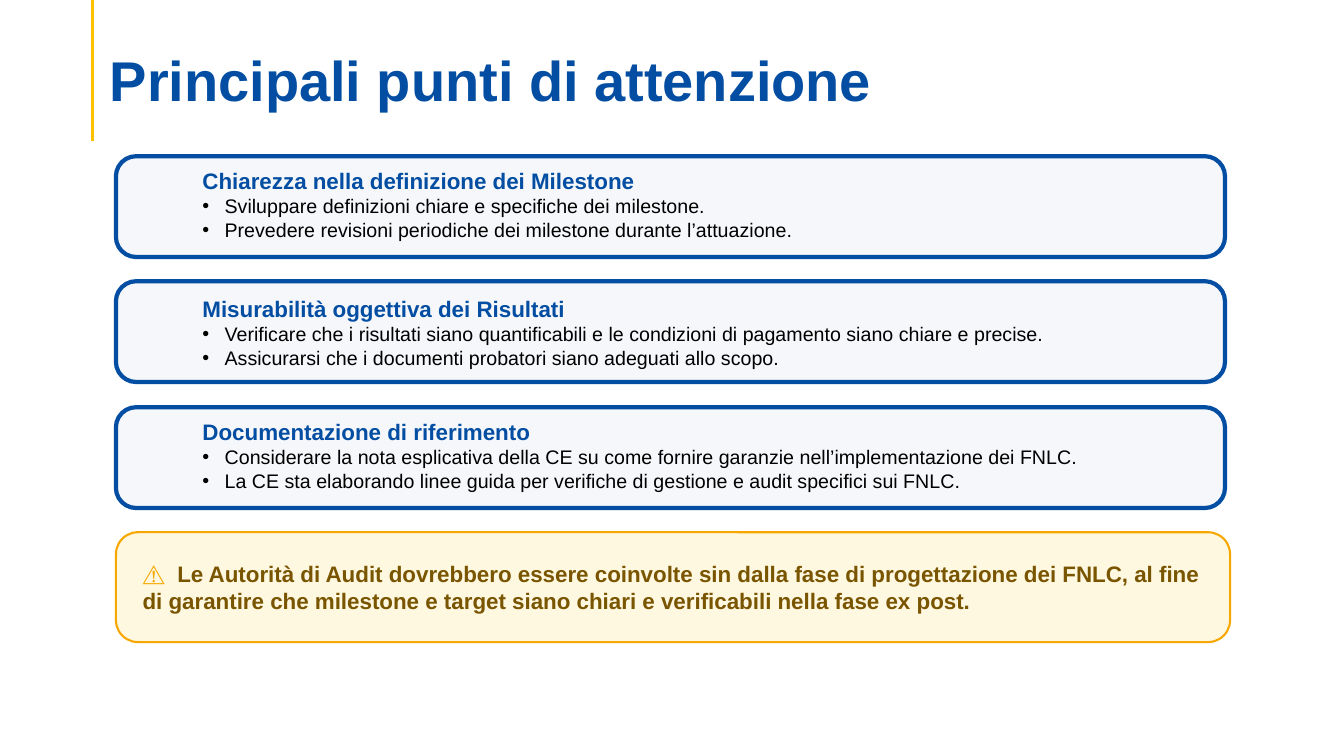
from lxml import etree
from pptx import Presentation
from pptx.dml.color import RGBColor
from pptx.enum.shapes import MSO_CONNECTOR, MSO_SHAPE
from pptx.enum.text import MSO_ANCHOR, PP_ALIGN
from pptx.oxml.ns import qn
from pptx.util import Pt

ROUNDED = MSO_SHAPE.ROUNDED_RECTANGLE
STRAIGHT = MSO_CONNECTOR.STRAIGHT
TOP, MIDDLE, BOTTOM = MSO_ANCHOR.TOP, MSO_ANCHOR.MIDDLE, MSO_ANCHOR.BOTTOM
LEFT = PP_ALIGN.LEFT

BLUE = RGBColor(0x03, 0x4E, 0xA2)
BLACK = RGBColor(0x00, 0x00, 0x00)
PALE_BLUE = RGBColor(0xF5, 0xF7, 0xFA)
GOLD = RGBColor(0xFF, 0xC0, 0x00)
AMBER = RGBColor(0xF7, 0xA8, 0x00)
CREAM = RGBColor(0xFF, 0xF8, 0xE1)
BROWN = RGBColor(0x7A, 0x55, 0x00)

EMU_PER_PX = 9144  # 100 px to the inch


def px(*lengths):
    return [length * EMU_PER_PX for length in lengths]


class Page:
    """One slide and the style shared by its elements."""

    font_name = "Arial"

    def __init__(self, deck):
        self.slide = deck.slides.add_slide(deck.slide_layouts[6])

    def style(self, target, size, color, bold):
        font = target.font
        font.name, font.size, font.bold = self.font_name, Pt(size), bold
        font.color.rgb = color

    def rule(self, start, end, color, weight):
        line = self.slide.shapes.add_connector(STRAIGHT, *px(*start, *end))
        line.line.color.rgb = color
        line.line.width = Pt(weight)
        etree.SubElement(line._element.spPr, qn("a:effectLst"))

    def frame(self, shape, anchor, margins):
        frame = shape.text_frame
        frame.word_wrap = True
        frame.vertical_anchor = anchor
        (frame.margin_left, frame.margin_top,
         frame.margin_right, frame.margin_bottom) = px(*margins)
        return frame

    def text_box(self, place, anchor=TOP, margins=(10, 5, 10, 5)):
        return self.frame(self.slide.shapes.add_textbox(*px(*place)), anchor, margins)

    def card(self, place, fill, line, weight):
        card = self.slide.shapes.add_shape(ROUNDED, *px(*place))
        card.adjustments[0] = 0.2
        card.shadow.inherit = False
        card.fill.solid()
        card.fill.fore_color.rgb = fill
        card.line.color.rgb = line
        card.line.width = Pt(weight)
        return card

    def title(self, place, text):
        frame = self.text_box(place, BOTTOM, (10, 5, 10, 0))
        frame.text = text
        para = frame.paragraphs[0]
        para.line_spacing = 0.9
        self.style(para.runs[0], 40, BLUE, True)

    def bullet(self, para):
        properties = para._p.get_or_add_pPr()
        indent, = px(22)
        properties.set("marL", str(indent))
        properties.set("indent", str(-indent))
        etree.SubElement(properties, qn("a:buFont"), typeface=self.font_name)
        etree.SubElement(properties, qn("a:buChar"), char="•")

    def topic(self, place, heading, points):
        frame = self.text_box(place)
        frame.text = heading
        self.style(frame.paragraphs[0].runs[0], 16, BLUE, True)
        for point in points:
            para = frame.add_paragraph()
            para.text = point
            self.bullet(para)
            self.style(para.runs[0], 14, BLACK, False)

    def warning(self, place, text):
        card = self.card(place, CREAM, AMBER, 1.5)
        para = self.frame(card, MIDDLE, (20, 9, 20, 9)).paragraphs[0]
        para.alignment = LEFT
        for words, color in (("⚠ ", AMBER), (text, BROWN)):
            span = para.add_run()
            span.text = words
            self.style(span, 16, color, True)
        # Letter spacing widens the gap after the sign
        para.runs[0]._r.get_or_add_rPr().set("spc", "220")


# Heading, points, and the place of the text: offset from the card, width, height
TOPICS = [
    ("Chiarezza nella definizione dei Milestone",
     ["Sviluppare definizioni chiare e specifiche dei milestone.",
      "Prevedere revisioni periodiche dei milestone durante l’attuazione."],
     (6, 997, 87)),
    ("Misurabilità oggettiva dei Risultati",
     ["Verificare che i risultati siano quantificabili e le condizioni di pagamento "
      "siano chiare e precise.",
      "Assicurarsi che i documenti probatori siano adeguati allo scopo."],
     (9, 997, 82)),
    ("Documentazione di riferimento",
     ["Considerare la nota esplicativa della CE su come fornire garanzie "
      "nell’implementazione dei FNLC.",
      "La CE sta elaborando linee guida per verifiche di gestione e audit "
      "specifici sui FNLC."],
     (6, 972, 87)),
]
CARD_LEFT, FIRST_TOP, LAST_TOP = 115, 155, 404


def main():
    deck = Presentation()
    deck.slide_width, deck.slide_height = px(1333, 750)
    page = Page(deck)

    # Title with its vertical rule
    page.rule((92, 0), (92, 140), GOLD, 2.25)
    page.title((99, 27, 1196, 86), "Principali punti di attenzione")

    # Topic cards, evenly spaced
    for index, (heading, points, (offset, width, height)) in enumerate(TOPICS):
        top = FIRST_TOP + (LAST_TOP - FIRST_TOP) * index // (len(TOPICS) - 1)
        page.card((CARD_LEFT, top, 1100, 100), PALE_BLUE, BLUE, 3)
        page.topic((191, top + offset, width, height), heading, points)

    # Closing warning
    page.warning((CARD_LEFT, 528, 1105, 109),
                 "Le Autorità di Audit dovrebbero essere coinvolte sin dalla fase di "
                 "progettazione dei FNLC, al fine di garantire che milestone e target "
                 "siano chiari e verificabili nella fase ex post.")
    deck.save("out.pptx")


if __name__ == "__main__":
    main()
